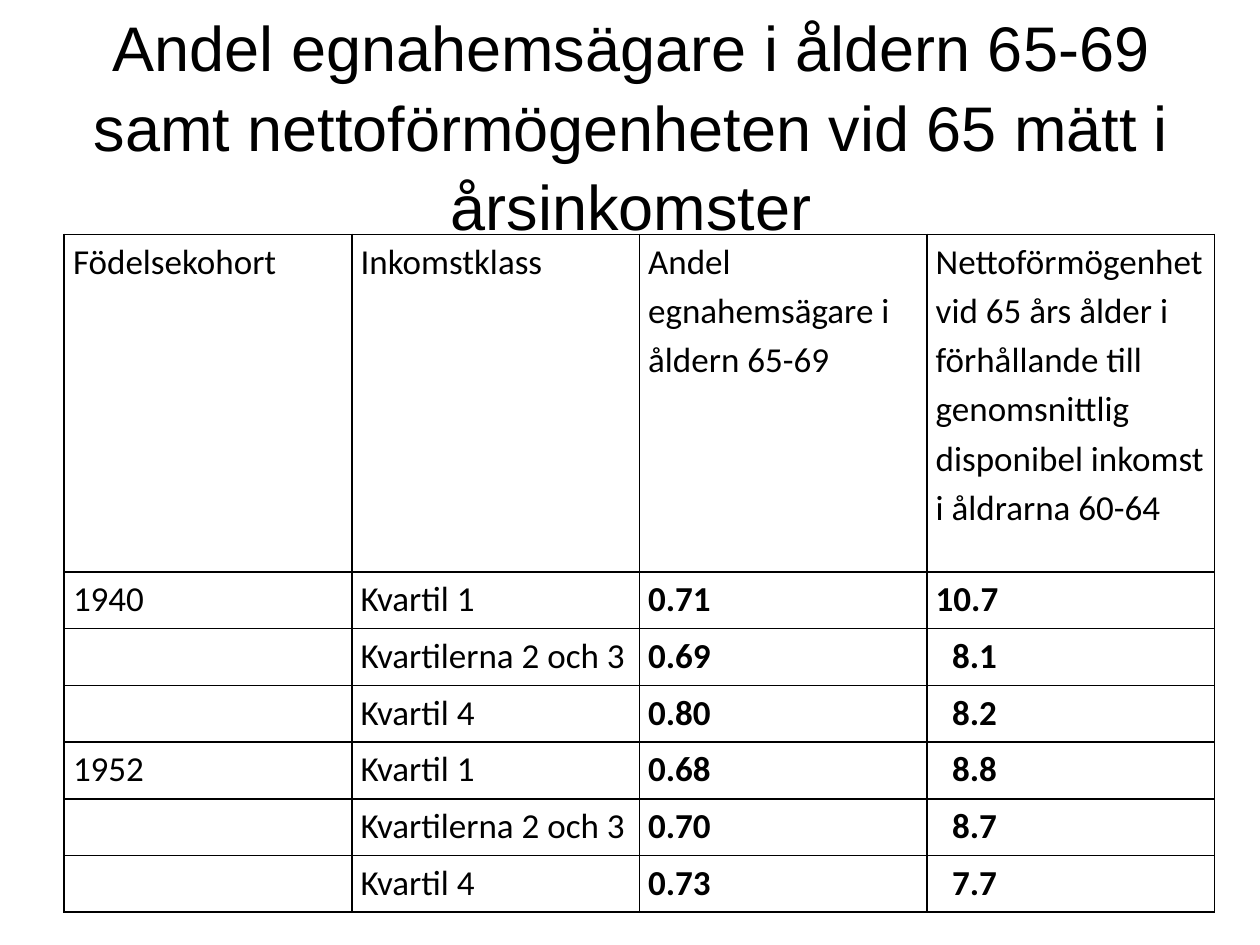
from dataclasses import dataclass

from lxml.etree import SubElement
from pptx import Presentation
from pptx.dml.color import RGBColor
from pptx.enum.text import MSO_ANCHOR, MSO_AUTO_SIZE, PP_ALIGN
from pptx.oxml.ns import qn
from pptx.util import Inches, Pt


@dataclass(frozen=True)
class Theme:
    ink: str = "000000"
    title_font: str = "Arial"
    table_font: str = "Calibri"
    title_size: int = 36
    table_size: int = 20
    border: int = 1


def write(tf, text, *, font, size, color, bold=False, align=PP_ALIGN.LEFT, spacing=1.0):
    """Fill the first paragraph of a text frame with one formatted run."""
    p = tf.paragraphs[0]
    p.alignment = align
    p.line_spacing = spacing
    p.font.size = Pt(size)
    if text:
        r = p.add_run()
        r.text = text
        r.font.name = font
        r.font.size = Pt(size)
        r.font.bold = bold
        r.font.color.rgb = RGBColor.from_string(color)


class SlideBuilder:
    def __init__(self, prs, theme):
        self.theme = theme
        self.s = prs.slides.add_slide(prs.slide_layouts[5])

    def title(self, text, left, top, width, height):
        sp = self.s.shapes.title
        sp.left, sp.top = Inches(left), Inches(top)
        sp.width, sp.height = Inches(width), Inches(height)
        tf = sp.text_frame
        tf.word_wrap = True
        tf.auto_size = MSO_AUTO_SIZE.NONE
        tf.vertical_anchor = MSO_ANCHOR.MIDDLE
        write(tf, text, font=self.theme.title_font, size=self.theme.title_size,
              color=self.theme.ink, align=PP_ALIGN.CENTER, spacing=1.05)

    def borders(self, cell):
        tc_pr = cell._tc.get_or_add_tcPr()
        for i, side in enumerate(("lnL", "lnR", "lnT", "lnB")):
            ln = tc_pr.makeelement(qn(f"a:{side}"), {"w": str(Pt(self.theme.border))})
            fill = SubElement(ln, qn("a:solidFill"))
            SubElement(fill, qn("a:srgbClr"), val=self.theme.ink)
            tc_pr.insert(i, ln)

    def cell(self, cell, text, bold, indent):
        cell.fill.background()
        cell.margin_left = Inches(0.07 + indent)
        cell.margin_right = Inches(0.07)
        cell.margin_top = cell.margin_bottom = 0
        write(cell.text_frame, text, font=self.theme.table_font,
              size=self.theme.table_size, color=self.theme.ink,
              bold=bold, spacing=1.15)
        self.borders(cell)

    def table(self, rows, left, top, width, head_height, row_height):
        height = head_height + row_height * (len(rows) - 1)
        tbl = self.s.shapes.add_table(len(rows), len(rows[0]), Inches(left), Inches(top),
                                      Inches(width), Inches(height)).table
        tbl.first_row = tbl.horz_banding = False
        for i, row in enumerate(rows):
            tbl.rows[i].height = Inches(row_height if i else head_height)
            for j, text in enumerate(row):
                # Single-digit wealth ratios are indented to align the decimals
                indent = 0.13 if i and j == 3 and len(text) == 3 else 0
                self.cell(tbl.cell(i, j), text, bold=i > 0 and j >= 2, indent=indent)


HEADERS = [
    "Födelsekohort",
    "Inkomstklass",
    "Andel egnahemsägare i åldern 65-69",
    "Nettoförmögenhet vid 65 års ålder i förhållande till genomsnittlig "
    "disponibel inkomst i åldrarna 60-64",
]
CLASSES = ["Kvartil 1", "Kvartilerna 2 och 3", "Kvartil 4"]
# Owner share and wealth ratio per income class
COHORTS = {
    "1940": [("0.71", "10.7"), ("0.69", "8.1"), ("0.80", "8.2")],
    "1952": [("0.68", "8.8"), ("0.70", "8.7"), ("0.73", "7.7")],
}


def main():
    prs = Presentation()
    prs.slide_width, prs.slide_height = Inches(10), Inches(7.5)
    slide = SlideBuilder(prs, Theme())

    # Heading
    slide.title("Andel egnahemsägare i åldern 65-69 samt nettoförmögenheten "
                "vid 65 mätt i årsinkomster", 0.51, 0.36, 9, 1.25)

    # Table: the cohort is named on its first row only
    rows = [HEADERS]
    for cohort, values in COHORTS.items():
        for k, (name, pair) in enumerate(zip(CLASSES, values)):
            rows.append(["" if k else cohort, name, *pair])
    slide.table(rows, 0.51, 1.86, 9.13, head_height=2.68, row_height=0.45)

    prs.save("out.pptx")


if __name__ == "__main__":
    main()
